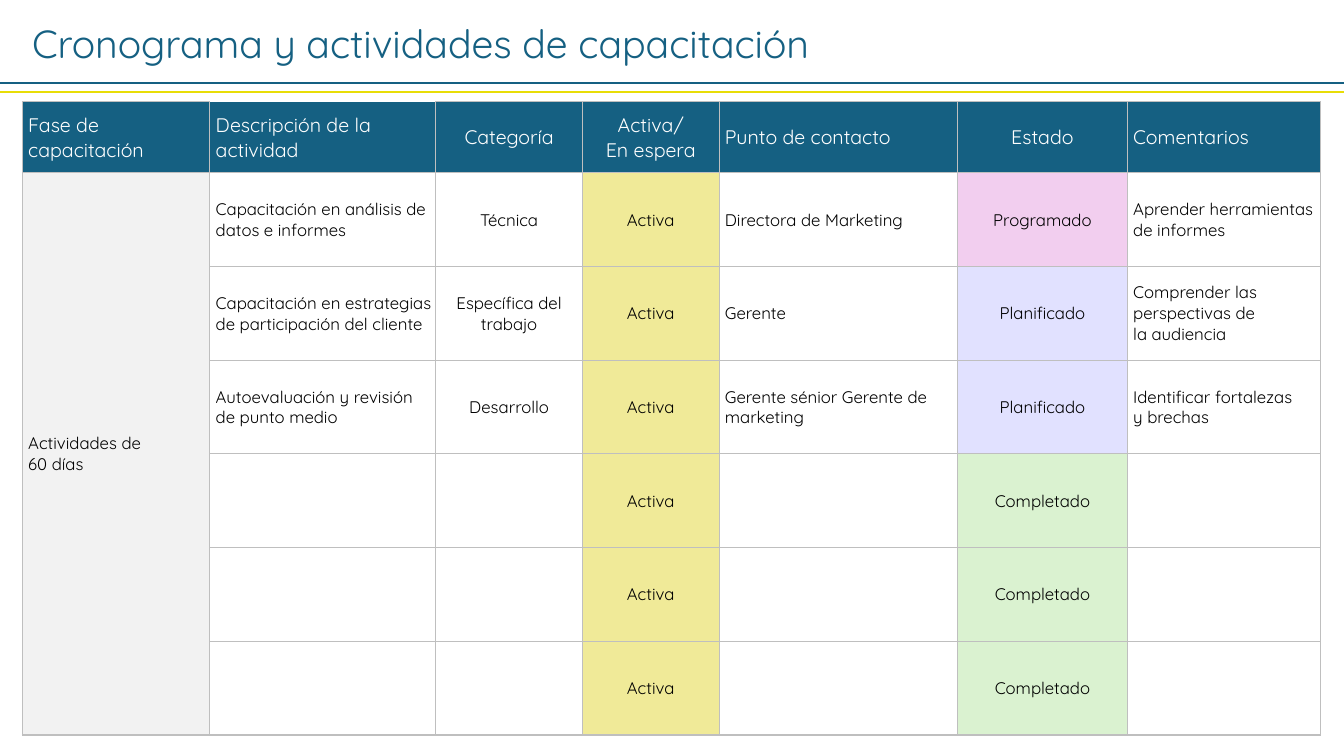
from dataclasses import dataclass

from lxml import etree
from pptx import Presentation
from pptx.dml.color import RGBColor
from pptx.enum.shapes import MSO_CONNECTOR
from pptx.enum.text import MSO_ANCHOR, PP_ALIGN
from pptx.oxml.ns import qn
from pptx.util import Inches, Pt

LEFT, CENTER = PP_ALIGN.LEFT, PP_ALIGN.CENTER
MIDDLE = MSO_ANCHOR.MIDDLE
STRAIGHT = MSO_CONNECTOR.STRAIGHT


@dataclass(frozen=True)
class Theme:
    font: str = "Quicksand"
    blue: str = "156082"
    yellow: str = "E8DD06"
    white: str = "FFFFFF"
    black: str = "000000"
    phase: str = "F2F2F2"
    border: str = "BFBFBF"
    title_size: int = 28
    header_size: int = 14
    body_size: int = 12
    rule_width: float = 1.5
    thin: float = 0.5
    thick: float = 1.5


THEME = Theme()
VALUE_FILLS = {
    "Activa": "F0EA98",
    "Programado": "F2CEEF",
    "Planificado": "E1E1FF",
    "Completado": "DAF2D0",
}

# Table content: heading, width in inches, alignment
COLUMNS = [
    ("Fase de capacitación", 1.86, LEFT),
    ("Descripción de la actividad", 2.24, LEFT),
    ("Categoría", 1.46, CENTER),
    ("Activa/\nEn espera", 1.35, CENTER),
    ("Punto de contacto", 2.37, LEFT),
    ("Estado", 1.68, CENTER),
    ("Comentarios", 1.92, LEFT),
]
PHASE = "Actividades de\n60 días"
ACTIVITIES = [
    ("Capacitación en análisis de datos e informes", "Técnica", "Activa",
     "Directora de Marketing", "Programado",
     "Aprender herramientas de informes"),
    ("Capacitación en estrategias de participación del cliente",
     "Específica del trabajo", "Activa", "Gerente", "Planificado",
     "Comprender las perspectivas de\nla audiencia"),
    ("Autoevaluación y revisión de punto medio", "Desarrollo", "Activa",
     "Gerente sénior Gerente de marketing", "Planificado",
     "Identificar fortalezas\ny brechas"),
] + [("", "", "Activa", "", "Completado", "")] * 3
HEADER_HEIGHT, ROW_HEIGHT = 0.7, 0.93


def write_text(text_frame, text, size, color, align=LEFT):
    """Write one paragraph; a newline becomes a line break."""
    paragraph = text_frame.paragraphs[0]
    paragraph.alignment = align
    paragraph.font.size = Pt(size)
    for index, line in enumerate(text.split("\n")):
        if index:
            paragraph.add_line_break()
        if line:
            run = paragraph.add_run()
            run.text = line
            run.font.name = THEME.font
            run.font.size = Pt(size)
            run.font.color.rgb = RGBColor.from_string(color)


def add_title(slide, text):
    box = slide.shapes.add_textbox(
        Inches(0.22), Inches(0.14), Inches(11.52), Inches(0.57))
    box.text_frame.word_wrap = True
    write_text(box.text_frame, text, THEME.title_size, THEME.blue)


def add_rule(slide, top, width, color):
    rule = slide.shapes.add_connector(
        STRAIGHT, 0, Inches(top), width, Inches(top))
    rule.line.color.rgb = RGBColor.from_string(color)
    rule.line.width = Pt(THEME.rule_width)
    etree.SubElement(rule._element.spPr, qn("a:effectLst"))


def set_borders(cell, widths):
    """Draw the borders, which come before the fill in the cell properties."""
    properties = cell._tc.get_or_add_tcPr()
    for index, (side, width) in enumerate(widths.items()):
        line = etree.Element(qn(f"a:ln{side}"), w=str(Pt(width)))
        if width:
            fill = etree.SubElement(line, qn("a:solidFill"))
            etree.SubElement(fill, qn("a:srgbClr"), val=THEME.border)
        else:
            etree.SubElement(line, qn("a:noFill"))
        properties.insert(index, line)


def format_cell(cell, text, align, size, color, fill=None):
    cell.vertical_anchor = MIDDLE
    cell.margin_left = Inches(0.06 if align == LEFT else 0.01)
    cell.margin_right = cell.margin_top = Inches(0.01)
    cell.margin_bottom = 0
    if fill:
        cell.fill.solid()
        cell.fill.fore_color.rgb = RGBColor.from_string(fill)
    else:
        cell.fill.background()
    write_text(cell.text_frame, text, size, color, align)


def add_schedule(slide):
    last_row = len(ACTIVITIES)
    widths = [width for _, width, _ in COLUMNS]
    table = slide.shapes.add_table(
        last_row + 1, len(COLUMNS), Inches(0.22), Inches(1.01),
        Inches(sum(widths)),
        Inches(HEADER_HEIGHT + ROW_HEIGHT * last_row)).table
    table.first_row = table.horz_banding = False
    for row in table.rows:
        row.height = Inches(ROW_HEIGHT)
    table.rows[0].height = Inches(HEADER_HEIGHT)

    # Header and activity cells
    for column, (heading, width, align) in enumerate(COLUMNS):
        table.columns[column].width = Inches(width)
        format_cell(table.cell(0, column), heading, align,
                    THEME.header_size, THEME.white, THEME.blue)
        if column:
            for row, activity in enumerate(ACTIVITIES, start=1):
                text = activity[column - 1]
                format_cell(table.cell(row, column), text, align,
                            THEME.body_size, THEME.black,
                            VALUE_FILLS.get(text))

    # Phase cell, spanning all activities
    phase = table.cell(1, 0)
    phase.merge(table.cell(last_row, 0))
    format_cell(phase, PHASE, LEFT, THEME.body_size, THEME.black, THEME.phase)

    # Borders: thicker at the foot, open above the description heading
    for row in range(last_row + 1):
        for column in range(len(COLUMNS)):
            cell = table.cell(row, column)
            at_foot = row == last_row or cell.is_merge_origin
            open_top = (row, column) == (0, 1)
            set_borders(cell, {
                "L": THEME.thin,
                "R": THEME.thin,
                "T": 0 if open_top else THEME.thin,
                "B": THEME.thick if at_foot else THEME.thin,
            })


def main():
    presentation = Presentation()
    presentation.slide_width = Inches(13.33)
    presentation.slide_height = Inches(7.5)
    slide = presentation.slides.add_slide(presentation.slide_layouts[6])
    add_schedule(slide)
    add_title(slide, "Cronograma y actividades de capacitación")
    add_rule(slide, 0.82, presentation.slide_width, THEME.blue)
    add_rule(slide, 0.91, presentation.slide_width, THEME.yellow)
    presentation.save("out.pptx")


if __name__ == "__main__":
    main()
